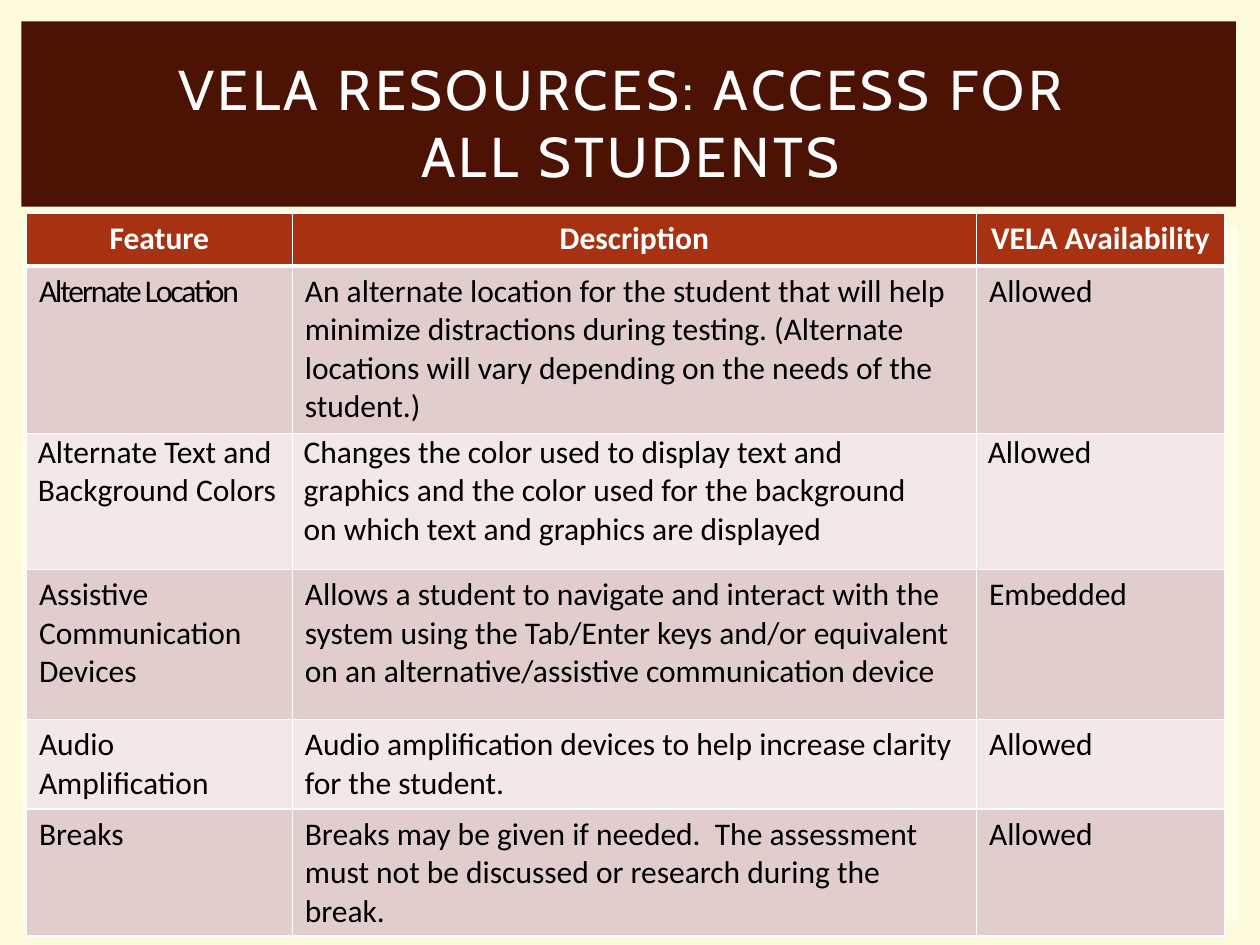
from lxml import etree
from pptx import Presentation
from pptx.dml.color import RGBColor
from pptx.enum.shapes import MSO_SHAPE
from pptx.enum.text import MSO_ANCHOR, PP_ALIGN
from pptx.oxml.ns import qn
from pptx.util import Inches, Pt

RECTANGLE = MSO_SHAPE.RECTANGLE
CENTER, LEFT = PP_ALIGN.CENTER, PP_ALIGN.LEFT
TOP, MIDDLE = MSO_ANCHOR.TOP, MSO_ANCHOR.MIDDLE


def paint(fill, color):
    fill.solid()
    fill.fore_color.rgb = RGBColor.from_string(color)


def style_text(para, font_name, size, color, bold, align, spacing):
    para.alignment = align
    for span in para.runs:
        span.font.name = font_name
        span.font.size = Pt(size)
        span.font.bold = bold
        span.font.color.rgb = RGBColor.from_string(color)
        span.font._element.set("spc", str(spacing))


deck = Presentation()
deck.slide_width = Inches(10)
deck.slide_height = Inches(7.5)
page = deck.slides.add_slide(deck.slide_layouts[6])
paint(page.background.fill, "FCFBDC")

panels = [
    (0.17, 1.79, 9.66, 5.52, "FFFEE6"),
    (0.17, 0.17, 9.64, 1.47, "4C1304"),
]
for left, top, width, height, color in panels:
    panel = page.shapes.add_shape(
        RECTANGLE, Inches(left), Inches(top), Inches(width), Inches(height))
    panel.shadow.inherit = False
    paint(panel.fill, color)
    panel.line.fill.background()

title = page.shapes.add_textbox(Inches(0.42), Inches(0.39), Inches(9.17), Inches(1.15))
title.text_frame.word_wrap = True
title.text_frame.vertical_anchor = MIDDLE
title.text_frame.text = "VELA RESOURCES: ACCESS FOR \vALL STUDENTS"
for para in title.text_frame.paragraphs:
    style_text(para, "Cabin", 32, "FFFFFF", False, CENTER, 200)

column_widths = [2.11, 5.43, 1.97]
row_heights = [0.42, 1.33, 1.08, 1.19, 0.71, 1.01]
features = [
    ("Feature", "Description", "VELA Availability"),
    ("Alternate Location",
     "An alternate location for the student that will help minimize distractions "
     "during testing. (Alternate locations will vary depending on the needs of "
     "the student.)",
     "Allowed"),
    ("Alternate Text and Background Colors",
     "Changes the color used to display text and graphics and the color used for "
     "the background on which text and graphics are displayed",
     "Allowed"),
    ("Assistive Communication Devices",
     "Allows a student to navigate and interact with the system using the Tab/Enter "
     "keys and/or equivalent on an alternative/assistive communication device",
     "Embedded"),
    ("Audio Amplification",
     "Audio amplification devices to help increase clarity for the student.",
     "Allowed"),
    ("Breaks",
     "Breaks may be given if needed.  The assessment must not be discussed or "
     "research during the break.",
     "Allowed"),
]
letter_spacing = {(1, 0): -120}
tight_row = 2
tight_right_margins = [0, 0.3, 0]

table = page.shapes.add_table(
    len(features), len(column_widths), Inches(0.21), Inches(1.69),
    Inches(sum(column_widths)), Inches(sum(row_heights))).table
for column, width in zip(table.columns, column_widths):
    column.width = Inches(width)
for row, height in zip(table.rows, row_heights):
    row.height = Inches(height)

for row_index, texts in enumerate(features):
    header = row_index == 0
    band = "A63212" if header else ("E1CECC" if row_index % 2 else "F1E8E7")
    for column_index, text in enumerate(texts):
        cell = table.cell(row_index, column_index)
        cell.text_frame.text = text
        cell.vertical_anchor = TOP
        if row_index == tight_row:
            cell.margin_left = Inches(0.09)
            cell.margin_right = Inches(tight_right_margins[column_index])
            cell.margin_top = cell.margin_bottom = 0
        style_text(
            cell.text_frame.paragraphs[0], "Calibri", 18,
            "FFFFFF" if header else "000000", header,
            CENTER if header else LEFT,
            letter_spacing.get((row_index, column_index), 0))
        properties = cell._tc.get_or_add_tcPr()
        for side in ("lnL", "lnR", "lnT", "lnB"):
            thick = header and side == "lnB"
            border = etree.SubElement(
                properties, qn(f"a:{side}"), w=str(Pt(3 if thick else 1)))
            border_fill = etree.SubElement(border, qn("a:solidFill"))
            etree.SubElement(border_fill, qn("a:srgbClr"), val="FFFFFF")
        paint(cell.fill, band)

deck.save("out.pptx")
